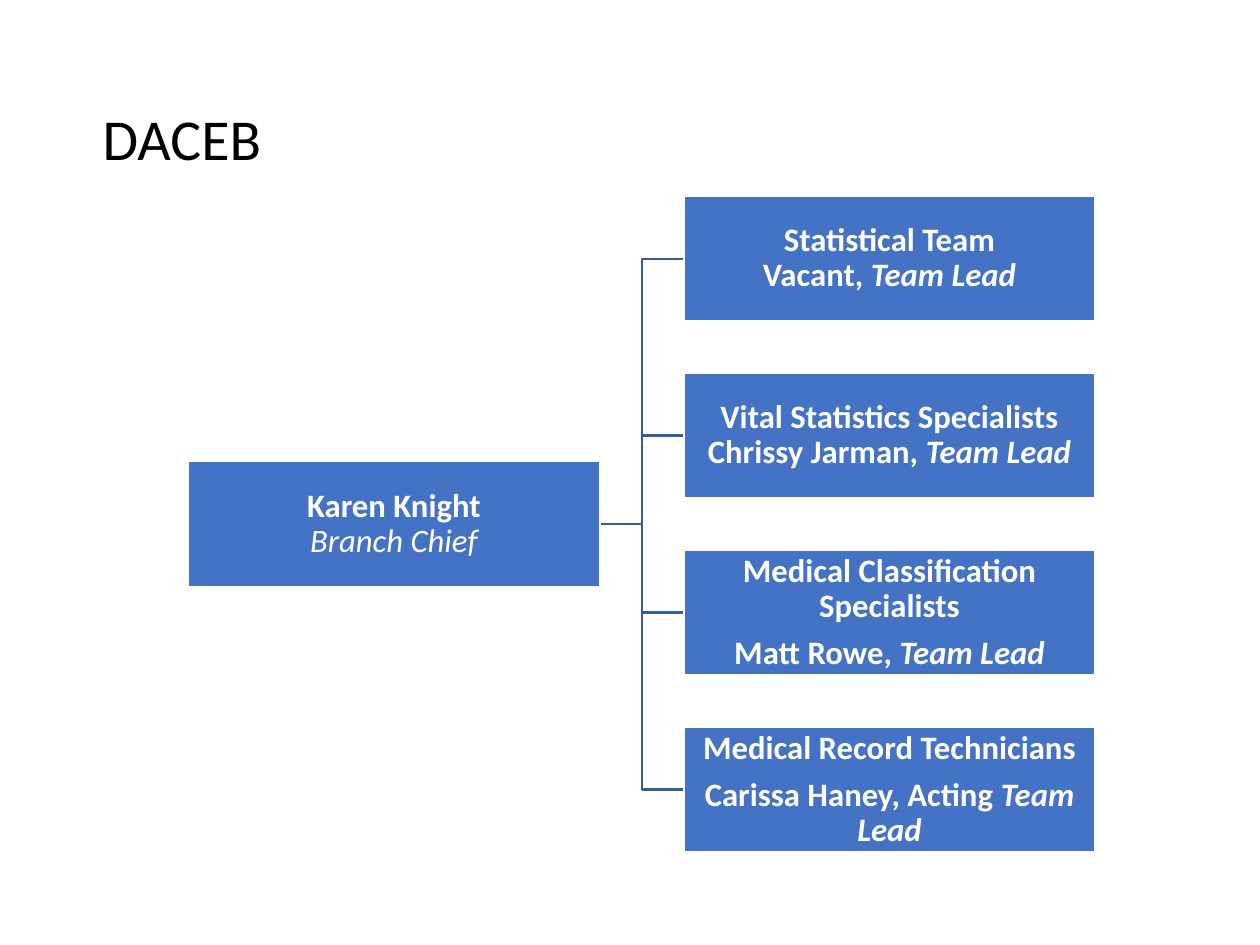
from dataclasses import dataclass

from pptx import Presentation
from pptx.dml.color import RGBColor
from pptx.enum import shapes, text
from pptx.util import Inches, Pt

BLUE = RGBColor(0x44, 0x72, 0xC4)
DARK_BLUE = RGBColor(0x36, 0x5B, 0x9D)
WHITE = RGBColor(0xFF, 0xFF, 0xFF)
BLACK = RGBColor(0x00, 0x00, 0x00)

BOX_W, BOX_H = 2.45, 0.75
CHIEF_X, CHIEF_MID = 1.12, 3.12
TEAM_X, TEAM_SPAN = 4.07, 3.16
LINK_X, ELBOW_X = 3.58, 3.82


@dataclass
class Run:
    text: str
    bold: bool = True
    italic: bool = False
    break_after: bool = False


@dataclass
class Box:
    lines: list[list[Run]]
    gap: float = 0  # points after each paragraph


LEAD = Run("Team Lead", italic=True)
CHIEF = Box([[Run("Karen Knight", break_after=True), Run("Branch Chief", bold=False, italic=True)]])
TEAMS = [
    Box([[Run("Statistical Team")], [Run("Vacant, "), LEAD]]),
    Box([[Run("Vital Statistics Specialists")], [Run("Chrissy Jarman, "), LEAD]]),
    Box([[Run("Medical Classification Specialists")], [Run("Matt Rowe, "), LEAD]], gap=5),
    Box([[Run("Medical Record Technicians")], [Run("Carissa Haney, Acting "), LEAD]], gap=5),
]


def set_font(font, size: float, color: RGBColor, **formats) -> None:
    for name, value in {"name": "Calibri", "size": Pt(size), **formats}.items():
        setattr(font, name, value)
    font.color.rgb = color


def set_frame(tf, **margins) -> None:
    formats = {"word_wrap": True, "auto_size": text.MSO_AUTO_SIZE.NONE,
               "vertical_anchor": text.MSO_ANCHOR.MIDDLE, **margins}
    for name, value in formats.items():
        setattr(tf, name, value)


def draw_box(s, box: Box, x: float, mid: float) -> None:
    sp = s.shapes.add_shape(shapes.MSO_SHAPE.RECTANGLE, Inches(x), Inches(mid - BOX_H / 2),
                            Inches(BOX_W), Inches(BOX_H))
    sp.shadow.inherit = False
    sp.fill.solid()
    sp.fill.fore_color.rgb = BLUE
    sp.line.color.rgb = WHITE
    sp.line.width = Pt(1)
    tf = sp.text_frame
    set_frame(tf, **{f"margin_{side}": Inches(0.01) for side in ("left", "top", "right", "bottom")})
    for i, line in enumerate(box.lines):
        p = tf.add_paragraph() if i else tf.paragraphs[0]
        p.alignment = text.PP_ALIGN.CENTER
        p.line_spacing = 0.9
        p.space_after = Pt(box.gap)
        for run in line:
            r = p.add_run()
            r.text = run.text
            set_font(r.font, 14, WHITE, bold=run.bold, italic=run.italic)
            if run.break_after:
                p.add_line_break()


def draw_link(s, mid: float) -> None:
    points = [(ELBOW_X, CHIEF_MID), (ELBOW_X, mid), (TEAM_X, mid)]
    builder = s.shapes.build_freeform(Inches(LINK_X), Inches(CHIEF_MID))
    builder.add_line_segments([(Inches(x), Inches(y)) for x, y in points], close=False)
    sp = builder.convert_to_shape()
    sp.shadow.inherit = False
    sp.fill.background()
    sp.line.color.rgb = DARK_BLUE
    sp.line.width = Pt(1)


def draw_title(s, words: str) -> None:
    title = s.shapes.title
    title.left, title.top = Inches(0.52), Inches(0.3)
    title.width, title.height = Inches(6.47), Inches(1.09)
    set_frame(title.text_frame, margin_left=Inches(0.09))
    p = title.text_frame.paragraphs[0]
    p.alignment = text.PP_ALIGN.LEFT
    p.line_spacing = 0.9
    r = p.add_run()
    r.text = words
    set_font(r.font, 24.8, BLACK)


def main() -> None:
    # A 4:3 slide
    prs = Presentation()
    prs.slide_width = Inches(7.5)
    prs.slide_height = prs.slide_width * 3 // 4
    s = prs.slides.add_slide(prs.slide_layouts[5])
    draw_title(s, "DACEB")

    # Teams are spread evenly around the chief's centre line
    pitch = TEAM_SPAN / (len(TEAMS) - 1)
    mids = [CHIEF_MID - TEAM_SPAN / 2 + i * pitch for i in range(len(TEAMS))]

    # Links lie behind the boxes
    for mid in reversed(mids):
        draw_link(s, mid)
    draw_box(s, CHIEF, CHIEF_X, CHIEF_MID)
    for team, mid in zip(TEAMS, mids):
        draw_box(s, team, TEAM_X, mid)

    prs.save("out.pptx")


if __name__ == "__main__":
    main()
